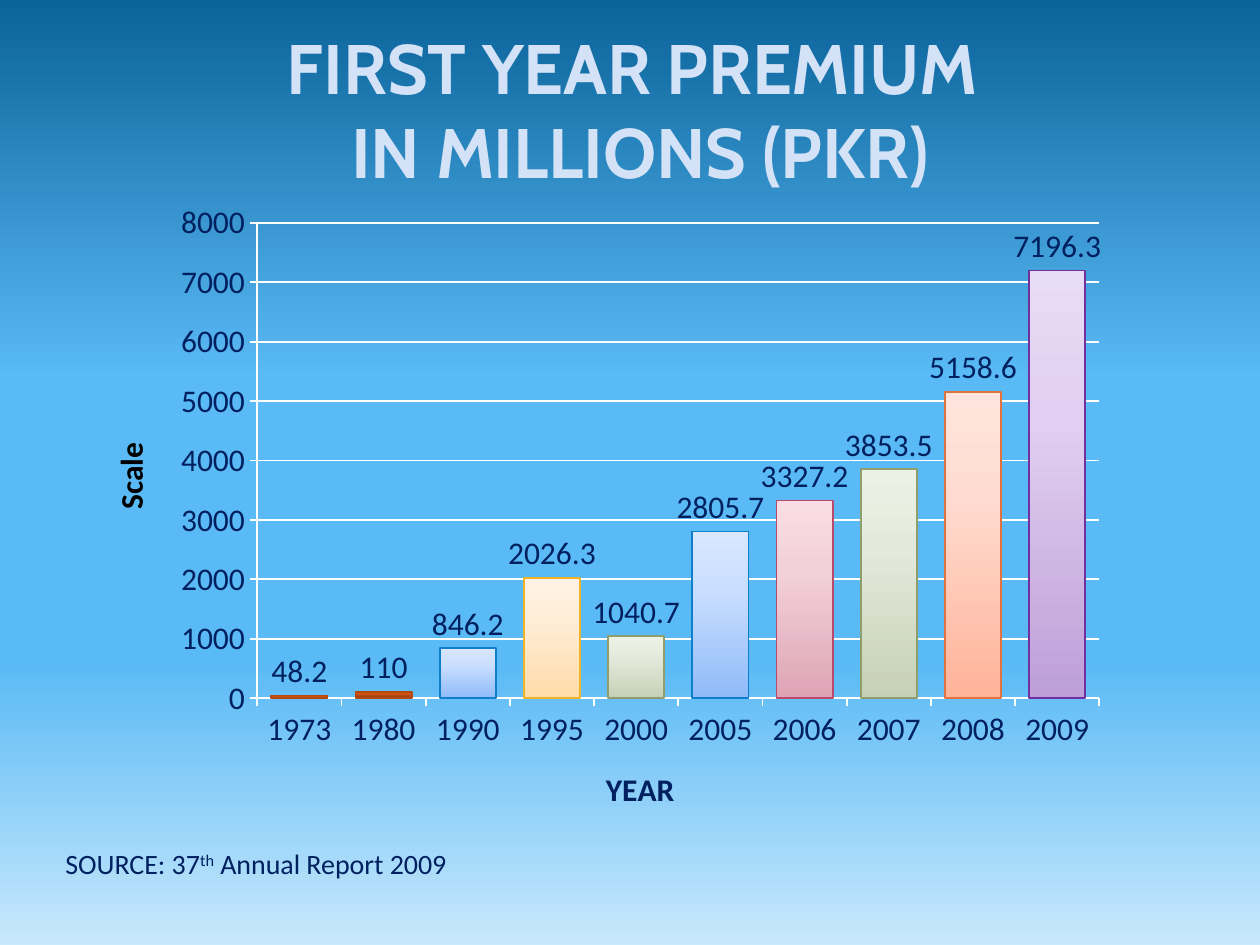
"""Build a slide with a column chart of first year premiums."""
from lxml import etree
from pptx import Presentation
from pptx.chart.data import CategoryChartData
from pptx.dml.color import RGBColor
from pptx.enum.chart import XL_CHART_TYPE, XL_LABEL_POSITION, XL_TICK_MARK
from pptx.enum.text import MSO_ANCHOR, PP_ALIGN
from pptx.oxml.ns import qn
from pptx.util import Inches, Pt

COLUMN = XL_CHART_TYPE.COLUMN_CLUSTERED
ABOVE = XL_LABEL_POSITION.OUTSIDE_END
OUT = XL_TICK_MARK.OUTSIDE
NONE = XL_TICK_MARK.NONE
MIDDLE = MSO_ANCHOR.MIDDLE
TOP = MSO_ANCHOR.TOP
CENTER = PP_ALIGN.CENTER

COLORS = {"navy": "002060", "title": "D4E2F8", "black": "000000",
          "white": "FFFFFF", "gold": "FFC000"}
SKY = [(0, "0A639A"), (40, "5ABAF5"), (70, "5ABAF5"), (100, "C8E8FC")]
FILLS = {
    "rust": ("B5480F", [(0, "8A3206"), (100, "F0661A")]),
    "blue": ("0F7FCB", [(0, "90BBF9"), (65, "C9DEFF"), (100, "D9E7FF")]),
    "sand": ("F0B428", [(0, "FFDBA7"), (65, "FFEDD8"), (100, "FFF2E4")]),
    "sage": ("8F9F6C", [(0, "C6D0B6"), (65, "E4EADB"), (100, "ECF1E5")]),
    "rose": ("B84A6C", [(0, "DEA4B6"), (65, "F3D1DB"), (100, "F9DDE5")]),
    "coral": ("E0733F", [(0, "FFB399"), (65, "FFDBCF"), (100, "FFE5DE")]),
    "plum": ("7030A0", [(0, "BE9FD8"), (65, "E0CFF0"), (100, "E9DCF6")]),
}
DATA = [("1973", 48.2, "rust"), ("1980", 110, "rust"),
        ("1990", 846.2, "blue"), ("1995", 2026.3, "sand"),
        ("2000", 1040.7, "sage"), ("2005", 2805.7, "blue"),
        ("2006", 3327.2, "rose"), ("2007", 3853.5, "sage"),
        ("2008", 5158.6, "coral"), ("2009", 7196.3, "plum")]
PLOT = {"layoutTarget": "inner", "xMode": "edge", "yMode": "edge",
        "x": 0.17, "y": 0.05, "w": 0.81, "h": 0.73}


def apply(obj, **values):
    for name, value in values.items():
        setattr(obj, name, value)


class Deck:
    def __init__(self, slide):
        self.slide = slide
        self.text = {"name": "Calibri", "size": Pt(18), "bold": False}

    def style(self, font, color, **extra):
        apply(font, **{**self.text, **extra})
        font.color.rgb = RGBColor.from_string(COLORS[color])

    def blend(self, root, stops, angle):
        solid = root.find(".//" + qn("a:solidFill"))
        grad = etree.Element(qn("a:gradFill"), rotWithShape="1")
        group = etree.SubElement(grad, qn("a:gsLst"))
        for spot, color in stops:
            stop = etree.SubElement(group, qn("a:gs"), pos=str(spot * 1000))
            etree.SubElement(stop, qn("a:srgbClr"), val=color)
        etree.SubElement(grad, qn("a:lin"), ang=str(angle * 60000), scaled="0")
        solid.getparent().replace(solid, grad)

    def back(self, stops):
        self.slide.background.fill.solid()
        self.blend(self.slide.element.find(".//" + qn("p:bgPr")), stops, 90)

    def title(self, lines, *box):
        shape = self.slide.shapes.title
        self.place(shape, box)
        frame = shape.text_frame
        apply(frame, text="\n".join(lines), word_wrap=True,
              vertical_anchor=MIDDLE)
        for para in frame.paragraphs:
            para.alignment = CENTER
            for run in para.runs:
                self.style(run.font, "title", name="Cabin", size=Pt(40),
                           bold=True)

    def place(self, shape, box):
        names = ("left", "top", "width", "height")
        apply(shape, **dict(zip(names, map(Inches, box))))

    def note(self, parts, *box):
        shape = self.slide.shapes.add_textbox(*map(Inches, box))
        frame = shape.text_frame
        apply(frame, word_wrap=True, vertical_anchor=TOP)
        for text, _ in parts:
            run = frame.paragraphs[0].add_run()
            run.text = text
            self.style(run.font, "navy", size=Pt(16))
        for props, (_, base) in zip(shape.element.iter(qn("a:rPr")), parts):
            props.set("baseline", str(base * 1000))

    def axis(self, axis, title, color):
        apply(axis, has_title=True, major_tick_mark=OUT, minor_tick_mark=NONE)
        self.style(axis.tick_labels.font, "navy")
        self.line(axis.format.line, COLORS["white"])
        frame = axis.axis_title.text_frame
        frame.text = title
        self.style(frame.paragraphs[0].runs[0].font, color, bold=True)

    def line(self, line, color, width=1):
        line.width = Pt(width)
        line.color.rgb = RGBColor.from_string(color)

    def chart(self, rows, *box):
        data = CategoryChartData()
        years, sums, hues = zip(*rows)
        data.categories = years
        data.add_series("Series 1", sums)
        chart = self.slide.shapes.add_chart(
            COLUMN, *map(Inches, box), data).chart
        apply(chart, has_legend=False, has_title=False)
        self.style(chart.font, "white")
        self.axis(chart.category_axis, "YEAR", "navy")
        axis = chart.value_axis
        self.axis(axis, "Scale", "black")
        apply(axis, minimum_scale=0, maximum_scale=8000, major_unit=1000,
              has_major_gridlines=True)
        self.line(axis.major_gridlines.format.line, COLORS["white"])
        plot = chart.plots[0]
        apply(plot, gap_width=50, vary_by_categories=False,
              has_data_labels=True)
        labels = plot.data_labels
        apply(labels, show_value=True, position=ABOVE)
        self.style(labels.font, "navy")
        series = plot.series[0]
        series.format.fill.solid()
        series.format.fill.fore_color.rgb = RGBColor.from_string(
            COLORS["gold"])
        for i, hue in enumerate(hues):
            look = series.points[i].format
            look.fill.solid()
            self.line(look.line, FILLS[hue][0])
        for point, hue in zip(chart.element.iter(qn("c:dPt")), hues):
            self.blend(point, FILLS[hue][1], 270)
        self.layout(chart)

    def layout(self, chart):
        area = chart.element.find(".//" + qn("c:plotArea"))
        old = area.find(qn("c:layout"))
        if old is not None:
            area.remove(old)
        outer = etree.Element(qn("c:layout"))
        inner = etree.SubElement(outer, qn("c:manualLayout"))
        for name, value in PLOT.items():
            etree.SubElement(inner, qn("c:" + name), val=str(value))
        area.insert(0, outer)


def main():
    show = Presentation()
    apply(show, slide_width=Inches(10), slide_height=Inches(7.5))
    deck = Deck(show.slides.add_slide(show.slide_layouts[5]))
    deck.back(SKY)
    deck.chart(DATA, 0.64, 1.51, 8.25, 5.17)
    deck.title(["FIRST YEAR PREMIUM ", "IN MILLIONS (PKR)"],
               0.08, 0.14, 10, 1.45)
    deck.note([("SOURCE: 37", 0), ("th", 30), (" Annual Report 2009", 0)],
              0.42, 6.67, 3.92, 0.37)
    show.save("out.pptx")


if __name__ == "__main__":
    main()
